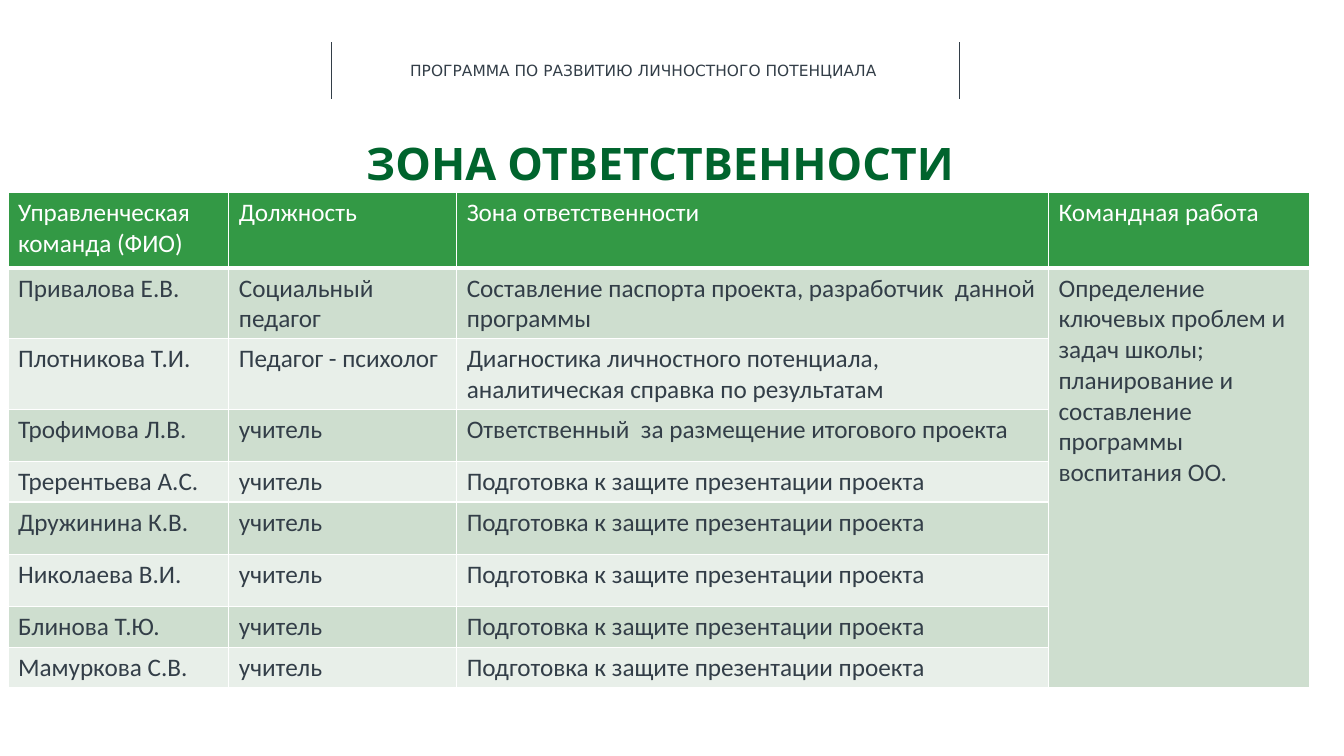
from lxml import etree
from pptx import Presentation
from pptx import util as u
from pptx.dml.color import RGBColor
from pptx.enum import shapes, text
from pptx.oxml import ns

PX = 9144
DARK = RGBColor(0x33, 0x3E, 0x48)
TITLE_GREEN = RGBColor(0x00, 0x64, 0x2D)
HEADER_GREEN = RGBColor(0x33, 0x99, 0x45)
BAND_DARK = RGBColor(0xCE, 0xDE, 0xCF)
BAND_LIGHT = RGBColor(0xE8, 0xEF, 0xE9)
WHITE = RGBColor(0xFF, 0xFF, 0xFF)

COLUMN_WIDTHS = [219, 226, 587, 259]
ROW_HEIGHTS = [75, 70, 70, 52, 40, 52, 52, 40, 40]
HEADINGS = ["Управленческая команда (ФИО)", "Должность", "Зона ответственности", "Командная работа"]
TEACHER = "учитель"
DEFENCE = "Подготовка к защите презентации проекта"
TEAM_WORK = "Определение ключевых проблем и задач школы; планирование и составление программы воспитания ОО."
MEMBERS = [
    ["Привалова Е.В.", "Социальный педагог", "Составление паспорта проекта, разработчик  данной программы"],
    ["Плотникова Т.И.", "Педагог - психолог", "Диагностика личностного потенциала, аналитическая справка по результатам"],
    ["Трофимова Л.В.", TEACHER, "Ответственный  за размещение итогового проекта"],
] + [[name, TEACHER, DEFENCE] for name in (
    "Трерентьева А.С.", "Дружинина К.В.", "Николаева В.И.", "Блинова Т.Ю.", "Мамуркова С.В.")]


def px(*lengths):
    return [u.Emu(length * PX) for length in lengths]


def write(frame, words, size, font, color, bold=False, align=text.PP_ALIGN.LEFT, spacing=None):
    frame.word_wrap = True
    paragraph = frame.paragraphs[0]
    paragraph.alignment = align
    paragraph.line_spacing = spacing
    run = paragraph.add_run()
    run.text = words
    run.font.size = u.Pt(size)
    run.font.name = font
    run.font.bold = bold
    run.font.color.rgb = color


def add_program_header(slide, left, top, width, height):
    for x in (left, left + width):
        rule = slide.shapes.add_connector(
            shapes.MSO_CONNECTOR.STRAIGHT, *px(x, top, x, top + height))
        rule.line.color.rgb = DARK
        rule.line.width = u.Pt(0.5)
        etree.SubElement(rule.element.spPr, ns.qn("a:effectLst"))
    label = slide.shapes.add_textbox(*px(left + 68, top + 14, 487, 29))
    write(label.text_frame, "ПРОГРАММА ПО РАЗВИТИЮ ЛИЧНОСТНОГО ПОТЕНЦИАЛА", 11, "DejaVu Sans", DARK)


def add_title(slide, left, top, width, height):
    title = slide.shapes.title
    title.left, title.top, title.width, title.height = px(left, top, width, height)
    frame = title.text_frame
    frame.margin_left = frame.margin_right = frame.margin_top = frame.margin_bottom = 0
    frame.vertical_anchor = text.MSO_ANCHOR.TOP
    frame.auto_size = text.MSO_AUTO_SIZE.NONE
    write(frame, "ЗОНА ОТВЕТСТВЕННОСТИ ", 32, "Karla", TITLE_GREEN,
          bold=True, align=text.PP_ALIGN.CENTER, spacing=0.9)


def style_cell(cell, fill, bottom_width):
    properties = cell._tc.get_or_add_tcPr()
    for side, width in (("L", 1), ("R", 1), ("T", 1), ("B", bottom_width)):
        border = etree.SubElement(properties, ns.qn("a:ln" + side), w=str(u.Pt(width)))
        solid = etree.SubElement(border, ns.qn("a:solidFill"))
        etree.SubElement(solid, ns.qn("a:srgbClr"), val=str(WHITE))
    cell.fill.solid()
    cell.fill.fore_color.rgb = fill


def add_duty_table(slide, left, top):
    frame = slide.shapes.add_table(
        len(ROW_HEIGHTS), len(COLUMN_WIDTHS),
        *px(left, top, sum(COLUMN_WIDTHS), sum(ROW_HEIGHTS)))
    table = frame.table
    table.horz_banding = False
    for column, width in zip(table.columns, COLUMN_WIDTHS):
        column.width = u.Emu(width * PX)
    for row, height in zip(table.rows, ROW_HEIGHTS):
        row.height = u.Emu(height * PX)

    last = len(COLUMN_WIDTHS) - 1
    table.cell(1, last).merge(table.cell(len(MEMBERS), last))
    contents = [HEADINGS, MEMBERS[0] + [TEAM_WORK]] + MEMBERS[1:]
    for r, row in enumerate(contents):
        heading = r == 0
        band = BAND_DARK if r % 2 else BAND_LIGHT
        for c in range(len(COLUMN_WIDTHS)):
            cell = table.cell(r, c)
            fill = HEADER_GREEN if heading else BAND_DARK if c == last else band
            style_cell(cell, fill, 3 if heading else 1)
            if c < len(row):
                write(cell.text_frame, row[c], 18, "Calibri", WHITE if heading else DARK)


def main():
    presentation = Presentation()
    presentation.slide_width, presentation.slide_height = px(1333, 750)
    slide = presentation.slides.add_slide(presentation.slide_layouts[5])
    slide.background.fill.solid()
    slide.background.fill.fore_color.rgb = WHITE
    add_program_header(slide, 329, 42, 623, 56)
    add_title(slide, -5, 141, 1331, 50)
    add_duty_table(slide, 8, 191)
    presentation.save("out.pptx")


if __name__ == "__main__":
    main()
